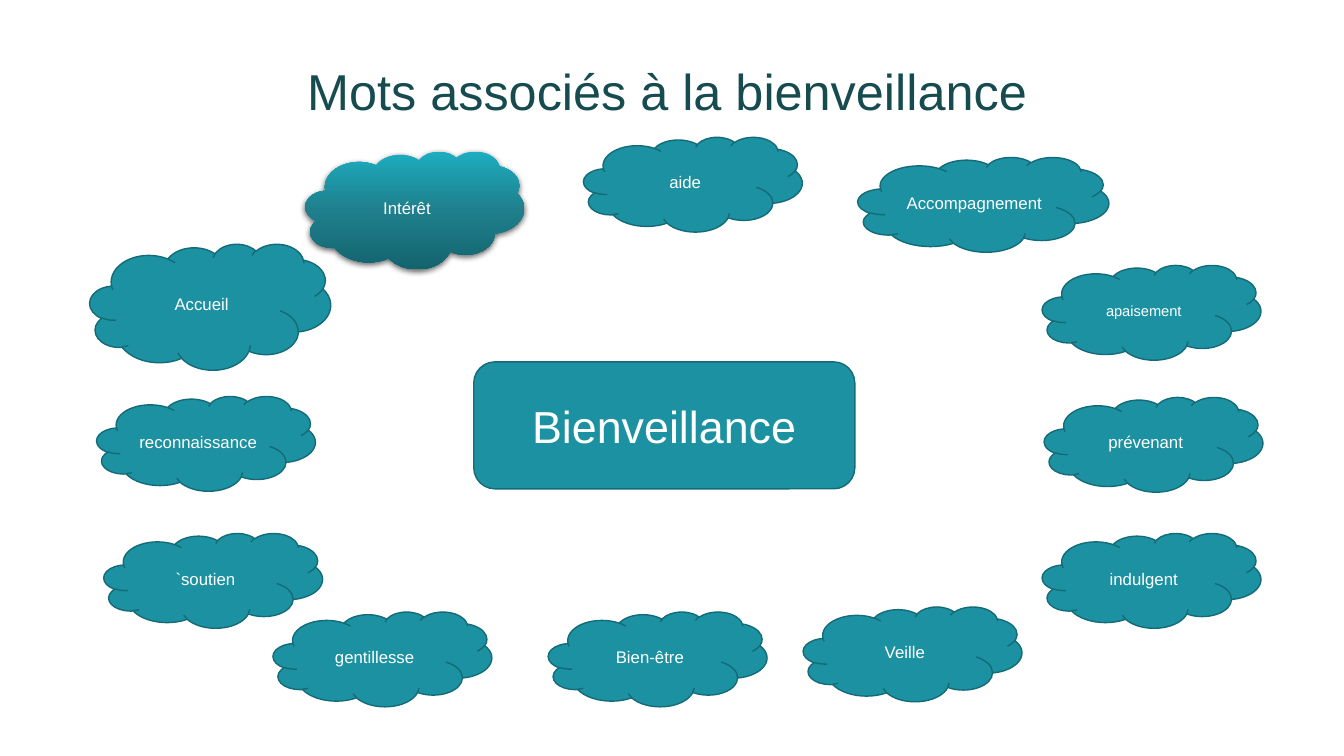
from copy import deepcopy

from lxml.etree import SubElement
from pptx import Presentation
from pptx.dml.color import RGBColor
from pptx.enum.shapes import MSO_SHAPE
from pptx.enum.text import MSO_ANCHOR, MSO_AUTO_SIZE, PP_ALIGN
from pptx.oxml.ns import qn
from pptx.util import Pt

FONT = "Arial"
TEAL = RGBColor(0x1B, 0x91, 0xA1)
TEAL_EDGE = RGBColor(0x14, 0x6B, 0x77)
TITLE_TEAL = RGBColor(0x16, 0x4B, 0x4F)
WHITE = RGBColor(0xFF, 0xFF, 0xFF)
GLOSS = [
    (0, RGBColor(0x1D, 0xAD, 0xC0)),
    (0.5, RGBColor(0x1F, 0x7F, 0x8C)),
    (1, RGBColor(0x13, 0x64, 0x6F)),
]

CLOUD_W, CLOUD_H = 156.2, 67.7
LEFT_X, RIGHT_X = 74.2, 744.5
LOW_Y, BOTTOM_Y = 380.9, 437

# Word, left, top, then any special format
CLOUDS = [
    ("Intérêt", 218.2, 108, {"h": 84.2, "glossy": True}),
    ("aide", 416.9, 97.9, {}),
    ("Accompagnement", 612.7, 112.3, {"w": 179.3}),
    ("Accueil", 64.1, 174.2, {"w": 172.1, "h": 90}),
    ("reconnaissance", 69.1, 283, {}),
    ("gentillesse", 195.1, BOTTOM_Y, {}),
    ("Bien-être", 391.7, BOTTOM_Y, {}),
    ("Veille", 573.8, 433.4, {}),
    ("indulgent", RIGHT_X, LOW_Y, {}),
    ("prévenant", 745.9, 283.7, {}),
    ("apaisement", RIGHT_X, 189.4, {"size": 10.5}),
    ("`soutien", LEFT_X, LOW_Y, {}),
]


def write_text(sp, text, size=12, color=WHITE, anchor=MSO_ANCHOR.MIDDLE, spacing=None):
    tf = sp.text_frame
    tf.word_wrap = True
    tf.auto_size = MSO_AUTO_SIZE.NONE
    tf.vertical_anchor = anchor
    p = tf.paragraphs[0]
    p.alignment = PP_ALIGN.CENTER
    p.line_spacing = spacing
    r = p.add_run()
    r.text = text
    r.font.name = FONT
    r.font.size = Pt(size)
    r.font.color.rgb = color


def add_gloss(sp):
    """Vertical three-stop gradient, no outline and a soft shadow below."""
    sp.line.fill.background()
    sp.fill.gradient()
    sp.fill.gradient_angle = 270
    sp_pr = sp._element.spPr
    stops = sp_pr.find(".//" + qn("a:gsLst"))
    stops.insert(1, deepcopy(stops[0]))
    for stop, (position, color) in zip(sp.fill.gradient_stops, GLOSS):
        stop.position = position
        stop.color.rgb = color
    shadow = SubElement(
        sp_pr.find(qn("a:effectLst")), qn("a:outerShdw"),
        blurRad=str(Pt(4.5)), dist=str(Pt(1.5)), dir="5400000",
        algn="ctr", rotWithShape="0")
    black = SubElement(shadow, qn("a:srgbClr"), val="000000")
    SubElement(black, qn("a:alpha"), val="63000")


def add_bubble(slide, kind, text, x, y, w=CLOUD_W, h=CLOUD_H, size=12, glossy=False):
    sp = slide.shapes.add_shape(kind, Pt(x), Pt(y), Pt(w), Pt(h))
    sp.shadow.inherit = False
    if glossy:
        add_gloss(sp)
    else:
        sp.fill.solid()
        sp.fill.fore_color.rgb = TEAL
        sp.line.color.rgb = TEAL_EDGE
        sp.line.width = Pt(1)
    write_text(sp, text, size=size)


def add_title(slide, text, x, y, w, h):
    title = slide.shapes.title
    title.left, title.top, title.width, title.height = Pt(x), Pt(y), Pt(w), Pt(h)
    write_text(title, text, size=36, color=TITLE_TEAL,
               anchor=MSO_ANCHOR.BOTTOM, spacing=0.9)


def add_word_cloud(slide, center_word, x, y, w, h):
    # Central idea
    add_bubble(slide, MSO_SHAPE.ROUNDED_RECTANGLE, center_word, x, y, w, h, size=32)
    # Ring of associated words
    for word, left, top, options in CLOUDS:
        add_bubble(slide, MSO_SHAPE.CLOUD, word, left, top, **options)


def main():
    prs = Presentation()
    prs.slide_width, prs.slide_height = Pt(960), Pt(540)
    slide = prs.slides.add_slide(prs.slide_layouts[5])
    add_title(slide, "Mots associés à la bienveillance", 98.6, 0, 756, 90)
    add_word_cloud(slide, "Bienveillance", 338.4, 258.5, 272.2, 90.7)
    prs.save("out.pptx")


if __name__ == "__main__":
    main()
